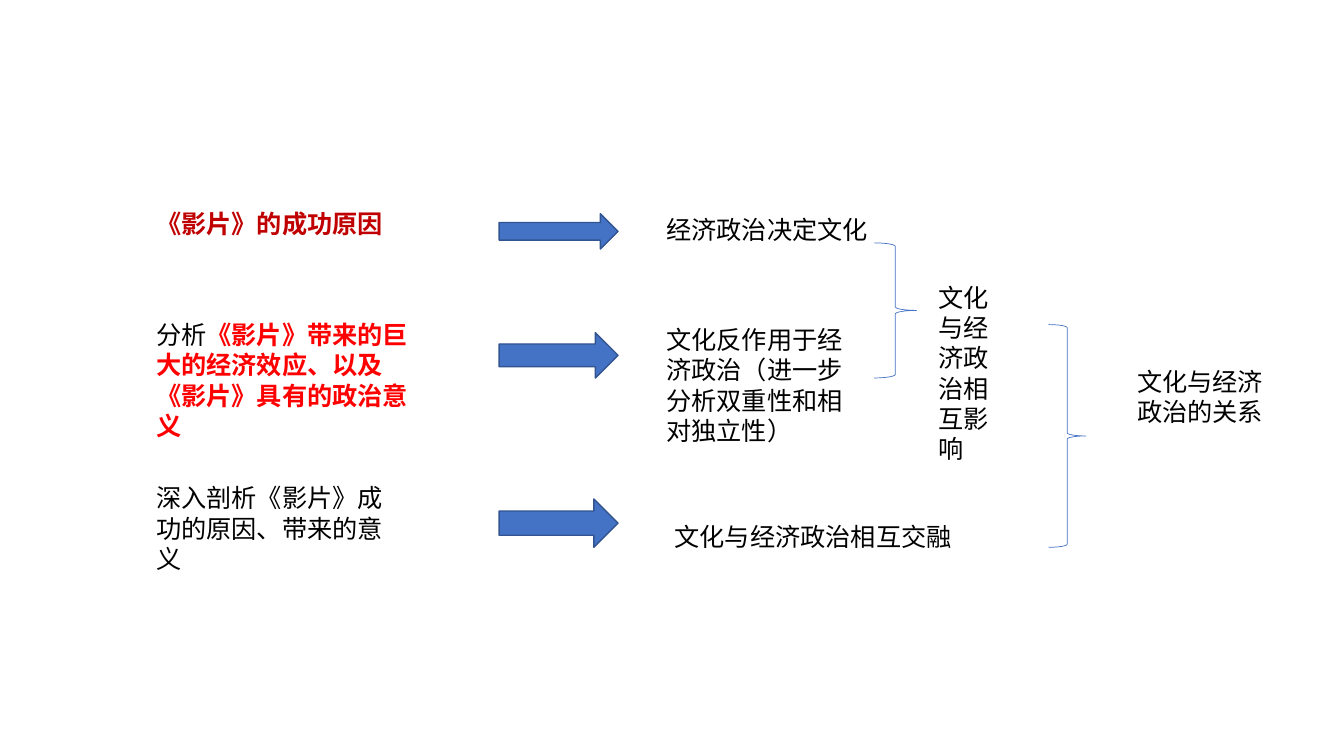
from lxml.etree import SubElement
from pptx import Presentation
from pptx.dml.color import RGBColor
from pptx.enum.shapes import MSO_SHAPE as Shape
from pptx.enum.text import MSO_AUTO_SIZE as AutoSize
from pptx.oxml.ns import qn
from pptx.util import Inches, Pt

COLORS = {
    "text": "000000",
    "cause": "C00000",
    "effect": "FF0000",
    "arrow": "4472C4",
    "outline": "325491",
}
LATIN_FONT = "Arial"
CHINESE_FONT = "Noto Sans CJK SC"
QUESTION_LEFT, ARROW_LEFT, ANSWER_LEFT = 1.45, 4.95, 6.51
ARROW_WIDTH = 1.18


def color(name):
    return RGBColor.from_string(COLORS[name])


def add_label(slide, left, top, width, height, *parts):
    """Add a text box; each part is (text, colour name), and coloured parts are bold."""
    box = slide.shapes.add_textbox(*map(Inches, (left, top, width, height)))
    frame = box.text_frame
    frame.word_wrap = True
    frame.auto_size = AutoSize.SHAPE_TO_FIT_TEXT
    paragraph = frame.paragraphs[0]
    paragraph.font.size = Pt(18)
    for text, tone in parts:
        run = paragraph.add_run()
        run.text = text
        highlighted = tone != "text"
        run.font.name = CHINESE_FONT if highlighted else LATIN_FONT
        run.font.bold = highlighted
        run.font.color.rgb = color(tone)
        east_asian = SubElement(run._r.get_or_add_rPr(), qn("a:ea"))
        east_asian.set("typeface", CHINESE_FONT)


def add_arrow(slide, top, height):
    arrow = slide.shapes.add_shape(
        Shape.RIGHT_ARROW, *map(Inches, (ARROW_LEFT, top, ARROW_WIDTH, height)))
    arrow.shadow.inherit = False
    arrow.fill.solid()
    arrow.fill.fore_color.rgb = color("arrow")
    arrow.line.color.rgb = color("outline")
    arrow.line.width = Pt(1)


def add_brace(slide, left, top, width, height):
    brace = slide.shapes.add_shape(
        Shape.RIGHT_BRACE, *map(Inches, (left, top, width, height)))
    brace.shadow.inherit = False
    brace.fill.background()
    brace.line.color.rgb = color("arrow")
    brace.line.width = Pt(0.5)


def main():
    deck = Presentation()
    deck.slide_width, deck.slide_height = Inches(13.33), Inches(7.5)
    slide = deck.slides.add_slide(deck.slide_layouts[6])

    add_label(slide, QUESTION_LEFT, 2.02, 2.45, 0.4, ("《影片》的成功原因", "cause"))
    add_label(slide, QUESTION_LEFT, 3.12, 2.75, 1.31, ("分析", "text"),
              ("《影片》带来的巨大的经济效应、以及《影片》具有的政治意义", "effect"))
    add_label(slide, QUESTION_LEFT, 4.74, 2.45, 1.01,
              ("深入剖析《影片》成功的原因、带来的意义", "text"))

    for top, height in ((2.12, 0.35), (3.3, 0.45), (4.95, 0.48)):
        add_arrow(slide, top, height)

    add_label(slide, ANSWER_LEFT, 2.08, 2.73, 0.4, ("经济政治决定文化", "text"))
    add_label(slide, ANSWER_LEFT, 3.17, 2.06, 1.31,
              ("文化反作用于经济政治（进一步分析双重性和相对独立性）", "text"))
    add_label(slide, 6.59, 5.12, 2.98, 0.4, ("文化与经济政治相互交融", "text"))

    add_brace(slide, 8.67, 2.41, 0.42, 1.34)
    add_label(slide, 9.21, 2.75, 0.82, 1.92, ("文化与经济政治相互影响", "text"))
    add_brace(slide, 10.4, 3.22, 0.37, 2.21)
    add_label(slide, 11.18, 3.58, 1.69, 0.71, ("文化与经济政治的关系", "text"))

    deck.save("out.pptx")


if __name__ == "__main__":
    main()
